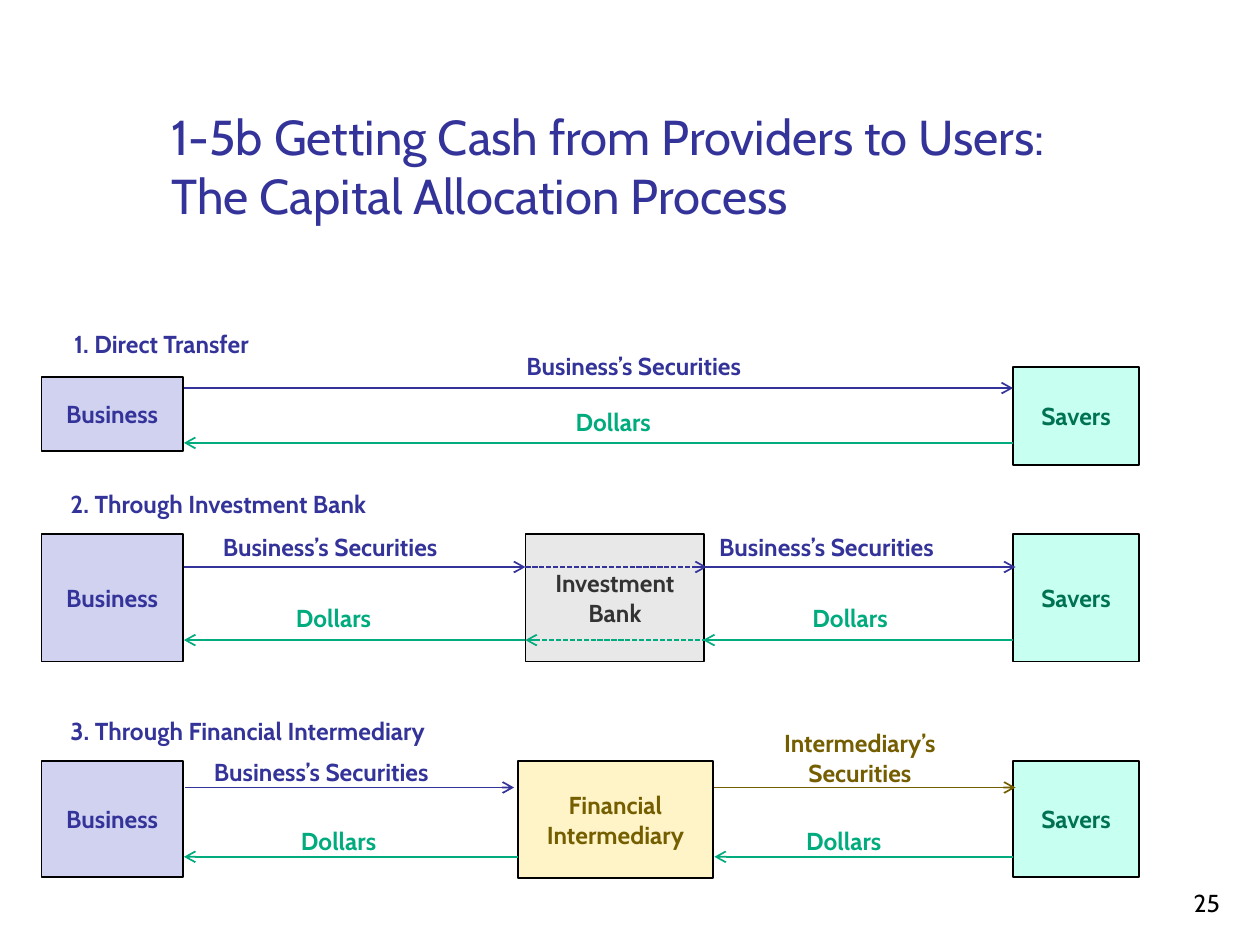
"""Build a slide on three ways capital moves between savers and businesses."""
import pptx
import pptx.dml.color
import pptx.enum.dml
import pptx.enum.shapes
import pptx.enum.text
import pptx.oxml.ns
import pptx.util
from lxml import etree

RGBColor = pptx.dml.color.RGBColor
Align = pptx.enum.text.PP_ALIGN
Anchor = pptx.enum.text.MSO_ANCHOR

NAVY = RGBColor(0x33, 0x33, 0x99)
LAVENDER = RGBColor(0xD1, 0xD1, 0xF0)
GREEN = RGBColor(0x00, 0xAB, 0x7E)
DARK_GREEN = RGBColor(0x00, 0x72, 0x54)
MINT = RGBColor(0xC7, 0xFF, 0xF0)
CHARCOAL = RGBColor(0x33, 0x33, 0x33)
GRAY = RGBColor(0xE8, 0xE8, 0xE8)
BROWN = RGBColor(0x74, 0x5E, 0x00)
CREAM = RGBColor(0xFF, 0xF4, 0xC8)
BLACK = RGBColor(0x00, 0x00, 0x00)

COLUMNS, ROWS = 100, 75
BUSINESS_LEFT, BUSINESS_WIDTH = 3.3, 11.2
SAVERS_LEFT, SAVERS_WIDTH = 80.4, 10
BUSINESS_EDGE = 14.6
LABEL_HEIGHT = 3.4


class FlowSlide:
    """Style and drawing methods for one slide on a grid of columns and rows."""

    def __init__(self, presentation, font="Cabin", size=14):
        self.presentation = presentation
        self.font = font
        self.size = size
        self.slide = presentation.slides.add_slide(presentation.slide_layouts[5])

    def x(self, columns):
        return round(self.presentation.slide_width * columns / COLUMNS)

    def y(self, rows):
        return round(self.presentation.slide_height * rows / ROWS)

    def frame(self, left, top, width, height):
        return self.x(left), self.y(top), self.x(width), self.y(height)

    def set_text(self, shape, text, color, align, anchor, bold=True, size=None):
        text_frame = shape.text_frame
        text_frame.word_wrap = True
        text_frame.auto_size = pptx.enum.text.MSO_AUTO_SIZE.NONE
        text_frame.vertical_anchor = anchor
        text_frame.text = text
        for paragraph in text_frame.paragraphs:
            paragraph.alignment = align
            for run in paragraph.runs:
                run.font.name = self.font
                run.font.size = pptx.util.Pt(size or self.size)
                run.font.bold = bold
                run.font.color.rgb = color

    def title(self, text, *place):
        shape = self.slide.shapes.title
        shape.left, shape.top, shape.width, shape.height = self.frame(*place)
        self.set_text(shape, text, NAVY, Align.LEFT, Anchor.BOTTOM, False, 28)

    def label(self, text, color, left, top, width, height=LABEL_HEIGHT,
              align=Align.LEFT, anchor=Anchor.TOP, bold=True):
        shape = self.slide.shapes.add_textbox(*self.frame(left, top, width, height))
        self.set_text(shape, text, color, align, anchor, bold)

    def securities(self, left, top):
        self.label("Business’s Securities", NAVY, left, top, 22.6)

    def dollars(self, left, top):
        self.label("Dollars", GREEN, left, top, 9)

    def box(self, text, color, fill, *place):
        shape = self.slide.shapes.add_shape(
            pptx.enum.shapes.MSO_SHAPE.FLOWCHART_PROCESS, *self.frame(*place))
        shape.shadow.inherit = False
        shape.fill.solid()
        shape.fill.fore_color.rgb = fill
        shape.line.color.rgb = BLACK
        shape.line.width = pptx.util.Pt(1)
        self.set_text(shape, text, color, Align.CENTER, Anchor.MIDDLE)

    def arrow(self, start, end, row, color, dashed=False):
        connector = self.slide.shapes.add_connector(
            pptx.enum.shapes.MSO_CONNECTOR.STRAIGHT,
            self.x(start), self.y(row), self.x(end), self.y(row))
        connector.line.color.rgb = color
        connector.line.width = pptx.util.Pt(1)
        if dashed:
            connector.line.dash_style = pptx.enum.dml.MSO_LINE.SQUARE_DOT
        qualified = pptx.oxml.ns.qn
        etree.SubElement(connector.get_or_add_ln(), qualified("a:tailEnd"), type="arrow")
        etree.SubElement(connector.element.spPr, qualified("a:effectLst"))


def main():
    presentation = pptx.Presentation()
    presentation.slide_width = pptx.util.Inches(10)
    presentation.slide_height = pptx.util.Inches(7.5)
    flow = FlowSlide(presentation)

    flow.title("1-5b Getting Cash from Providers to Users:\vThe Capital Allocation Process",
               12.6, 2.3, 85.2, 16)
    flow.label("25", BLACK, 77, 68.3, 20.8, 5, Align.RIGHT, Anchor.BOTTOM, False)

    for top, height in ((29.9, 5.9), (42.4, 10.1), (60.4, 9.2)):
        flow.box("Business", NAVY, LAVENDER, BUSINESS_LEFT, top, BUSINESS_WIDTH, height)
    for top, height in ((29.1, 7.8), (42.4, 10.1), (60.4, 9.2)):
        flow.box("Savers", DARK_GREEN, MINT, SAVERS_LEFT, top, SAVERS_WIDTH, height)
    flow.box("Investment Bank", CHARCOAL, GRAY, 41.7, 42.4, 14.2, 10.1)
    flow.box("Financial Intermediary", BROWN, CREAM, 41.1, 60.4, 15.5, 9.3)

    for heading, left, top, width in (
            ("1. Direct Transfer", 4.9, 25.6, 19.3),
            ("2. Through Investment Bank", 4.6, 38.3, 31.2),
            ("3. Through Financial Intermediary", 4.6, 56.3, 35.8)):
        flow.label(heading, NAVY, left, top, width)

    for start, end, row, color in (
            (BUSINESS_EDGE, SAVERS_LEFT, 30.8, NAVY),
            (SAVERS_LEFT, BUSINESS_EDGE, 35.15, GREEN),
            (BUSINESS_EDGE, 41.7, 45, NAVY),
            (55.9, 80.6, 45, NAVY),
            (41.7, BUSINESS_EDGE, 50.8, GREEN),
            (SAVERS_LEFT, 55.8, 50.8, GREEN),
            (14.7, 40.8, 62.5, NAVY),
            (56.7, 80.6, 62.5, BROWN),
            (41.1, BUSINESS_EDGE, 68, GREEN),
            (SAVERS_LEFT, 56.7, 68, GREEN)):
        flow.arrow(start, end, row, color)
    flow.arrow(41.7, 56.1, 45, NAVY, dashed=True)
    flow.arrow(56.1, 41.7, 50.8, GREEN, dashed=True)

    for left, top in ((40.8, 27.4), (16.7, 41.7), (56.1, 41.7), (16, 59.6)):
        flow.securities(left, top)
    for left, top in ((44.7, 31.8), (22.5, 47.4), (63.5, 47.4), (22.9, 65.1), (63, 65.1)):
        flow.dollars(left, top)
    flow.label("Intermediary’s\nSecurities", BROWN, 59.9, 57.3, 16.7, 5.7,
               Align.CENTER, Anchor.MIDDLE)

    presentation.save("out.pptx")


if __name__ == "__main__":
    main()
